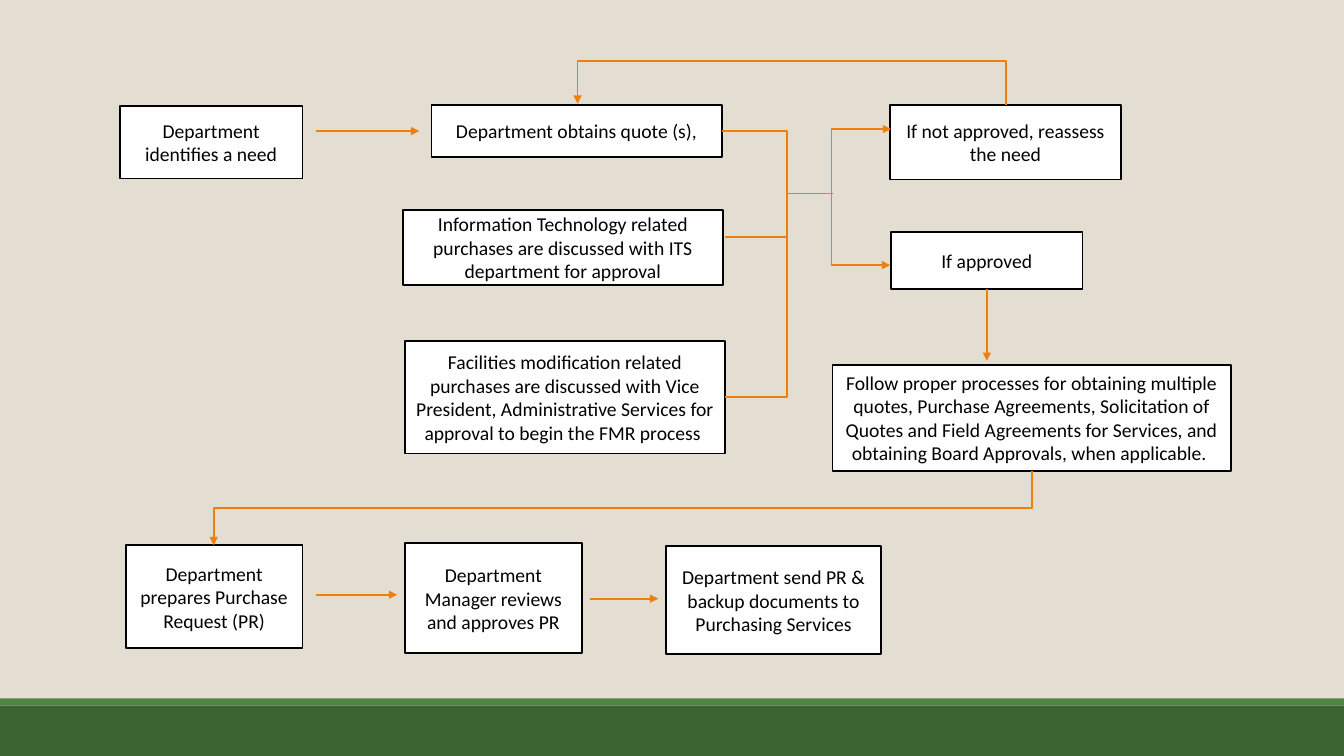
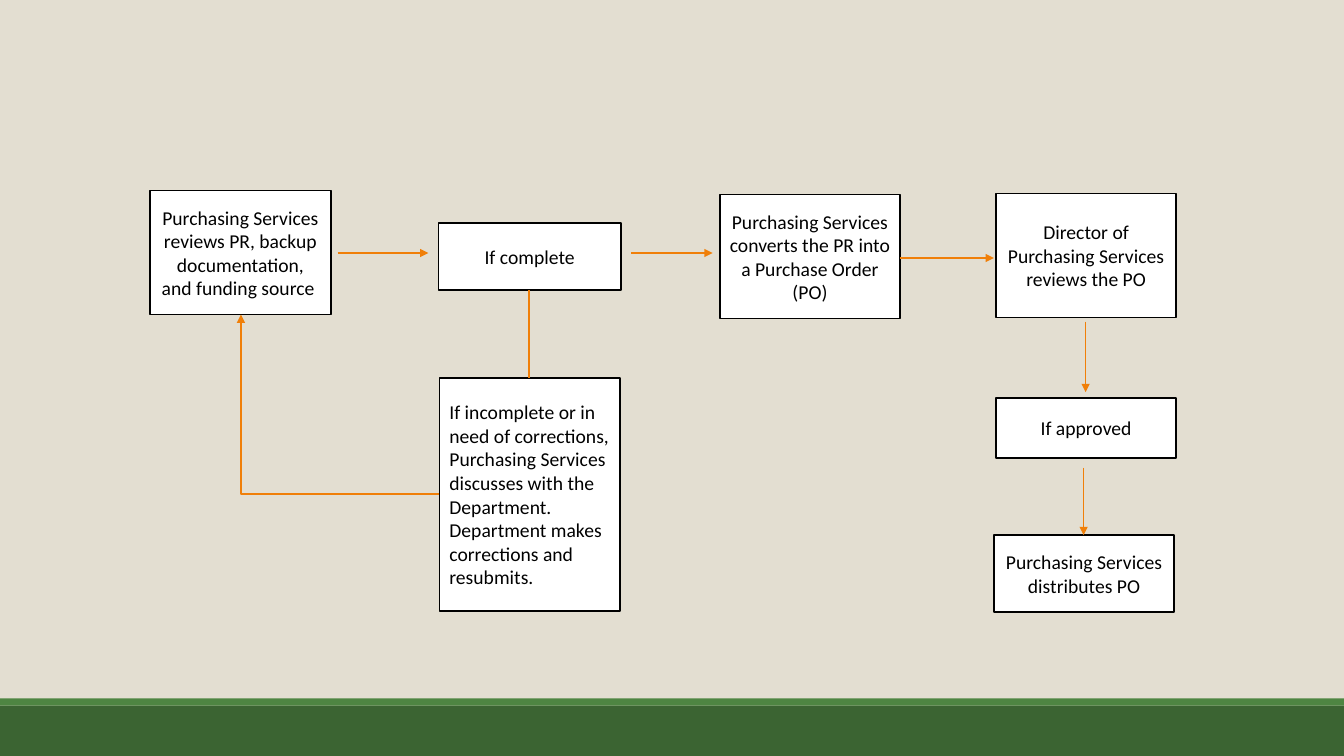
from dataclasses import dataclass

from lxml import etree
from pptx import Presentation
from pptx import util as u
from pptx.dml.color import RGBColor
from pptx.enum import shapes, text
from pptx.oxml import ns

BACKGROUND = RGBColor(0xE3, 0xDE, 0xD1)
FOOTER_GREEN = RGBColor(0x3B, 0x64, 0x32)
STRIPE_GREEN = RGBColor(0x4E, 0x85, 0x42)
ORANGE = RGBColor(0xF0, 0x7F, 0x09)
WHITE = RGBColor(0xFF, 0xFF, 0xFF)
BLACK = RGBColor(0, 0, 0)

CELL = u.Inches(0.1)
PAGE_COLUMNS, PAGE_ROWS = 133.33, 75
LINE_WIDTH = u.Pt(1.25)
FONT_NAME, FONT_SIZE = "Calibri", u.Pt(14)
CENTER, LEFT = text.PP_ALIGN.CENTER, text.PP_ALIGN.LEFT


@dataclass(frozen=True)
class Step:
    label: str
    column: float
    row: float
    columns: float
    rows: float
    align: text.PP_ALIGN = CENTER


@dataclass(frozen=True)
class Link:
    start: tuple[float, float]
    end: tuple[float, float]
    head: bool = False
    tail: bool = True


@dataclass(frozen=True)
class Elbow(Link):
    heading: int = 0
    bend: float | None = None


@dataclass(frozen=True)
class Band:
    row: float
    rows: float
    color: RGBColor


BANDS = [Band(70, 5, FOOTER_GREEN), Band(69.3, 0.7, STRIPE_GREEN)]

REQUEST_STEPS = [
    Step("Department identifies a need", 11.9, 10.5, 18.1, 7.2),
    Step("Department obtains quote (s),", 42.8, 10.4, 28.8, 5.2),
    Step("Information Technology related purchases are discussed with ITS "
         "department for approval", 40, 20.8, 31.7, 7.5),
    Step("Facilities modification related purchases are discussed with Vice "
         "President, Administrative Services for approval to begin the FMR "
         "process ", 40.2, 33.8, 31.7, 11.2),
    Step("If not approved, reassess the need", 88.3, 10.4, 22.9, 7.4),
    Step("If approved", 88.4, 23, 19, 5.7),
    Step("Follow proper processes for obtaining multiple quotes, Purchase "
         "Agreements, Solicitation of Quotes and Field Agreements for "
         "Services, and obtaining Board Approvals, when applicable. ",
         82.6, 36.2, 39.5, 10.5),
    Step("Department prepares Purchase Request (PR)", 12.5, 54.1, 17.5, 10.2),
    Step("Department Manager reviews and approves PR", 40.2, 53.9, 17.5, 10.9),
    Step("Department send PR & backup documents to Purchasing Services",
         66.1, 54.2, 21.3, 10.7),
]
REQUEST_LINKS = [
    Elbow((88.4, 12.8), (88.3, 26.3), head=True, heading=180, bend=6),
    Link((71.9, 23.5), (78.1, 23.5), tail=False),
    Link((78.1, 19.2), (82.6, 19.2), tail=False),
    Elbow((71.6, 13), (71.9, 39.4), tail=False, bend=6.5),
    Link((97.9, 28.7), (97.9, 35.8)),
    Elbow((102.4, 46.7), (21.2, 54.1), heading=90, bend=3.7),
    Link((31.3, 59), (39.4, 59)),
    Link((58.5, 59.4), (65.3, 59.4)),
    Elbow((99.8, 10.4), (57.3, 10.3), heading=270, bend=4.4),
    Link((31.3, 13), (41.6, 13)),
]

ORDER_STEPS = [
    Step("Purchasing Services reviews PR, backup documentation, and funding "
         "source ", 14.9, 18.9, 17.9, 12.3),
    Step("If incomplete or in need of corrections, Purchasing Services "
         "discusses with the Department.\n"
         "Department makes corrections and resubmits.",
         43.6, 37.5, 17.9, 23.1, LEFT),
    Step("If complete", 43.5, 22.1, 18.1, 6.7),
    Step("Purchasing Services converts the PR into a Purchase Order (PO)",
         71.4, 19.3, 17.9, 12.3),
    Step("Director of Purchasing Services reviews the PO",
         98.8, 19.2, 17.9, 12.3),
    Step("If approved", 98.8, 39.5, 17.9, 5.9),
    Step("Purchasing Services distributes PO", 98.6, 53.1, 17.9, 7.6),
]
ORDER_LINKS = [
    Link((89.3, 25.6), (98.6, 25.6)),
    Link((62.6, 25.1), (70.7, 25.1)),
    Link((107.7, 31.9), (107.7, 38.9)),
    Link((107.5, 46.4), (107.5, 53.1)),
    Link((52.5, 28.8), (52.5, 37.5), tail=False),
    Link((33.5, 25.1), (42.5, 25.1)),
    Elbow((43.6, 49), (23.9, 31.2), heading=180),
]


def cells(count: float) -> int:
    return round(count * CELL)


def add_box(page, preset, column: float, row: float, columns: float,
            rows: float, fill: RGBColor):
    box = page.shapes.add_shape(
        preset, cells(column), cells(row), cells(columns), cells(rows))
    box.shadow.inherit = False
    box.fill.solid()
    box.fill.fore_color.rgb = fill
    box.line.fill.background()
    return box


def add_step(page, step: Step) -> None:
    box = add_box(page, shapes.MSO_SHAPE.FLOWCHART_PROCESS, step.column,
                  step.row, step.columns, step.rows, WHITE)
    box.line.color.rgb = BLACK
    box.line.width = LINE_WIDTH
    frame = box.text_frame
    frame.word_wrap = True
    frame.vertical_anchor = text.MSO_ANCHOR.MIDDLE
    frame.text = step.label
    for para in frame.paragraphs:
        para.alignment = step.align
        for span in para.runs:
            span.font.name = FONT_NAME
            span.font.size = FONT_SIZE
            span.font.color.rgb = BLACK


def style_line(connector, link: Link) -> None:
    connector.line.color.rgb = ORANGE
    connector.line.width = LINE_WIDTH
    outline = connector.line._get_or_add_ln()
    for tag, wanted in (("a:headEnd", link.head), ("a:tailEnd", link.tail)):
        if wanted:
            etree.SubElement(outline, ns.qn(tag), type="triangle")
    etree.SubElement(connector._element.spPr, ns.qn("a:effectLst"))


def add_link(page, link: Link) -> None:
    connector = page.shapes.add_connector(
        shapes.MSO_CONNECTOR.STRAIGHT,
        *(cells(value) for value in (*link.start, *link.end)))
    style_line(connector, link)


def add_elbow(page, elbow: Elbow) -> None:
    (x1, y1), (x2, y2) = elbow.start, elbow.end
    dx, dy = x2 - x1, y2 - y1
    along, across = {0: (dx, dy), 90: (dy, -dx),
                     180: (-dx, -dy), 270: (-dy, dx)}[elbow.heading]
    middle_x, middle_y = (x1 + x2) / 2, (y1 + y2) / 2
    connector = page.shapes.add_connector(
        shapes.MSO_CONNECTOR.ELBOW,
        cells(middle_x - along / 2), cells(middle_y - across / 2),
        cells(middle_x + along / 2), cells(middle_y + across / 2))
    properties = connector._element.spPr
    if elbow.heading:
        properties.find(ns.qn("a:xfrm")).set("rot", str(elbow.heading * 60000))
    geometry = properties.find(ns.qn("a:prstGeom"))
    if elbow.bend is None:
        geometry.set("prst", "bentConnector2")
    else:
        guides = geometry.find(ns.qn("a:avLst"))
        share = round(elbow.bend / along * 100000)
        etree.SubElement(guides, ns.qn("a:gd"), name="adj1",
                         fmla=f"val {share}")
    style_line(connector, elbow)


def add_page(deck, steps: list[Step], links: list[Link]) -> None:
    page = deck.slides.add_slide(deck.slide_layouts[6])
    for band in BANDS:
        add_box(page, shapes.MSO_SHAPE.RECTANGLE, 0, band.row, PAGE_COLUMNS,
                band.rows, band.color)
    for step in steps:
        add_step(page, step)
    for link in links:
        if isinstance(link, Elbow):
            add_elbow(page, link)
        else:
            add_link(page, link)


def main() -> None:
    deck = Presentation()
    deck.slide_width = cells(PAGE_COLUMNS)
    deck.slide_height = cells(PAGE_ROWS)
    fill = deck.slide_master.background.fill
    fill.solid()
    fill.fore_color.rgb = BACKGROUND
    add_page(deck, REQUEST_STEPS, REQUEST_LINKS)
    add_page(deck, ORDER_STEPS, ORDER_LINKS)
    deck.save("out.pptx")


if __name__ == "__main__":
    main()
